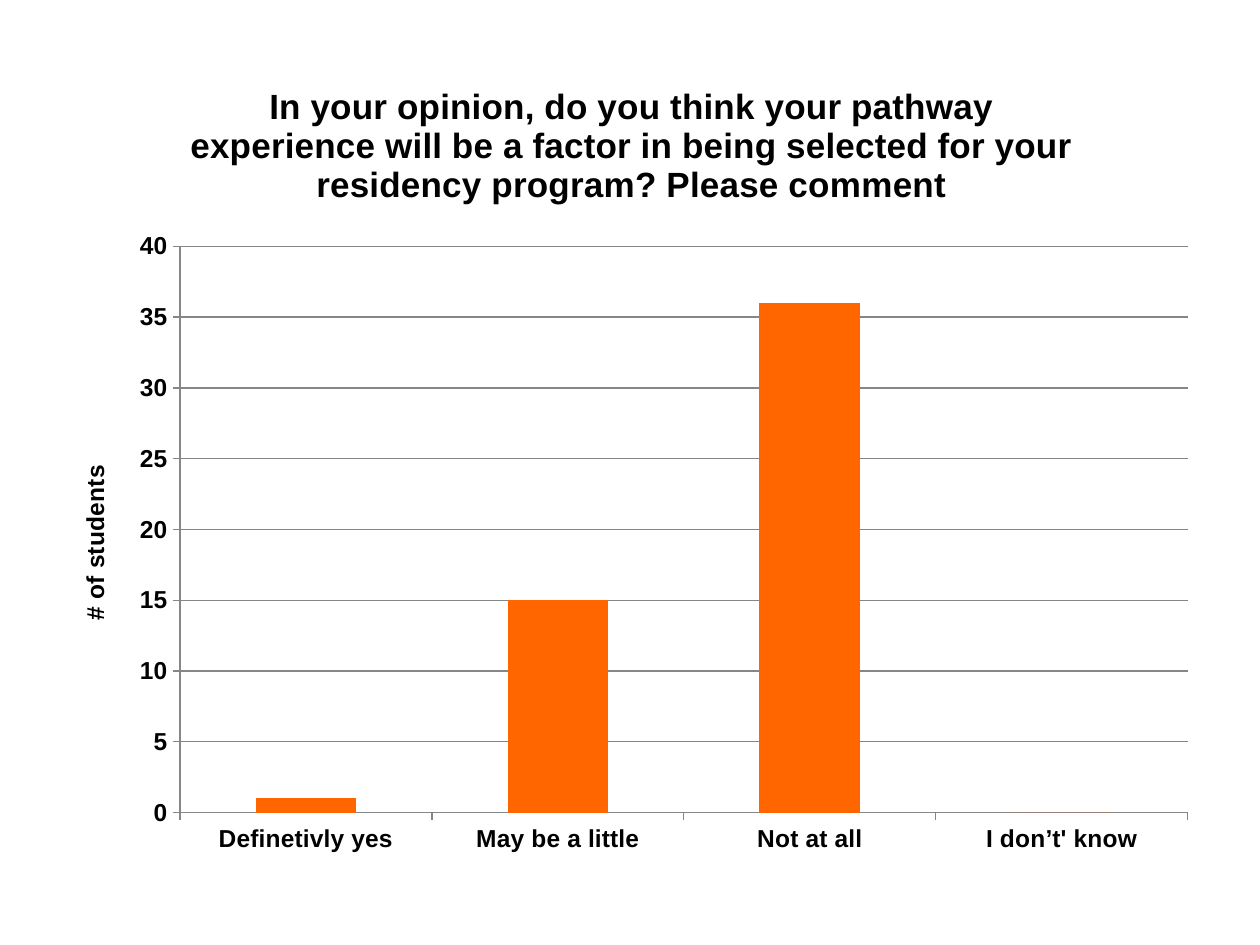
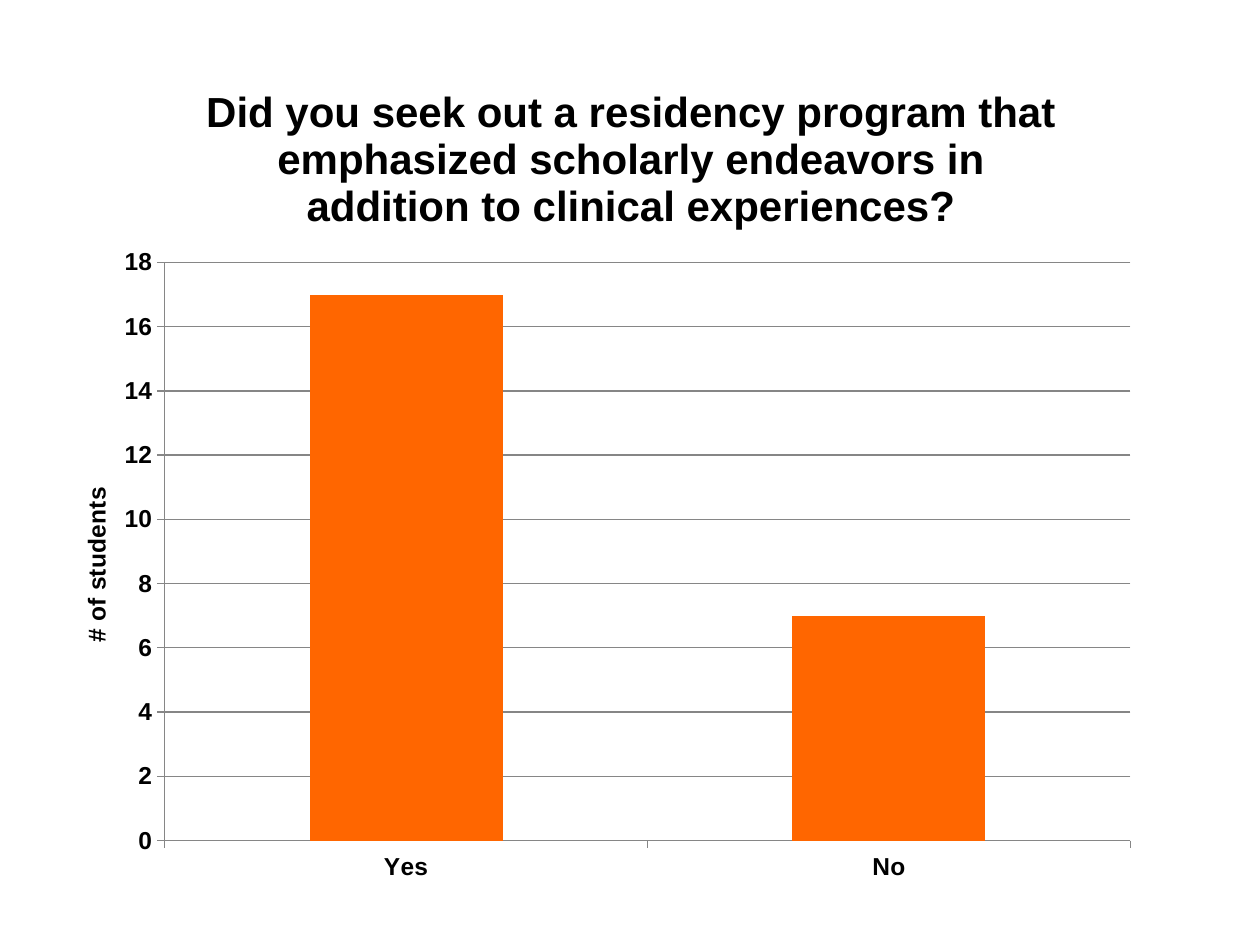
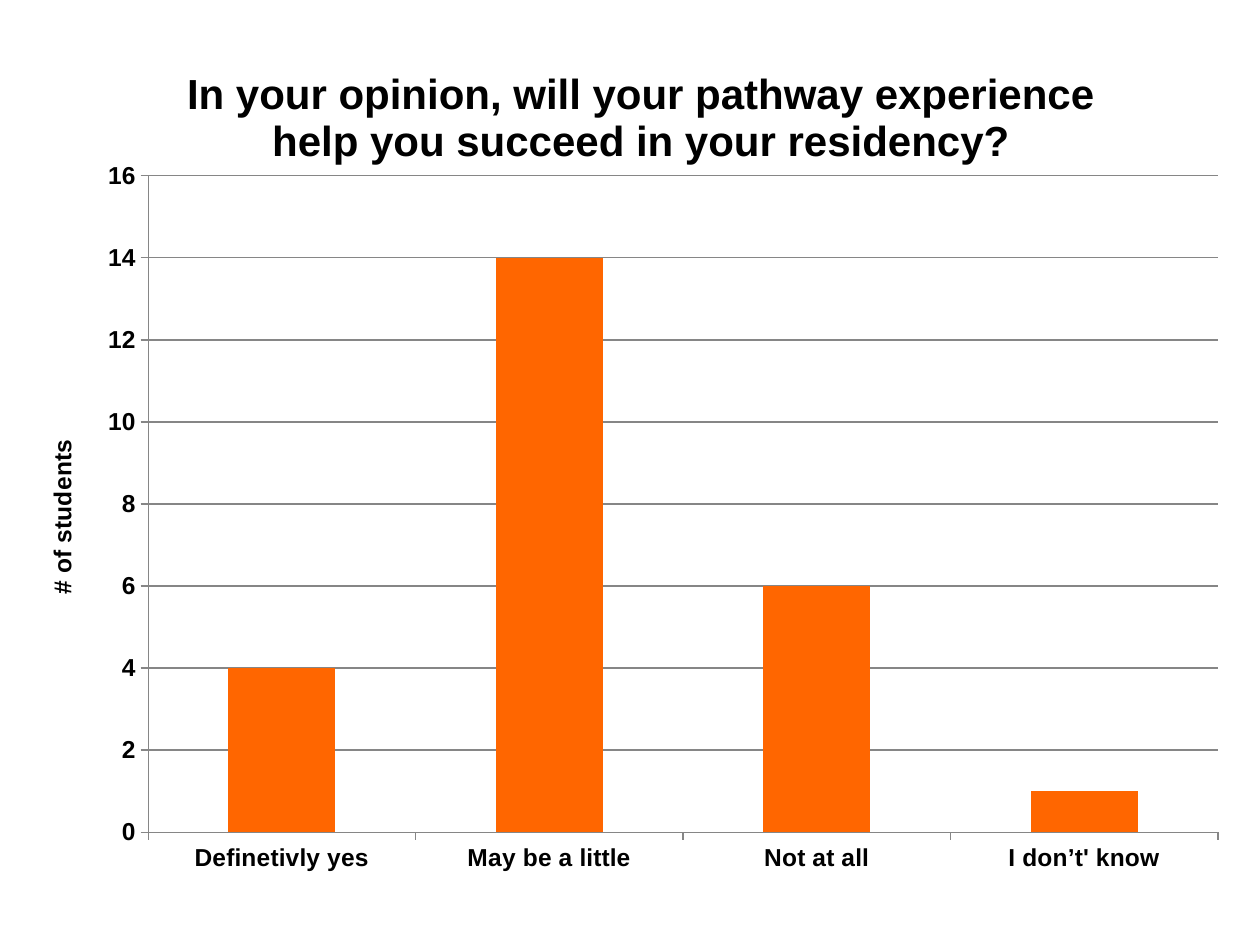
from pptx import Presentation
from pptx.chart.data import CategoryChartData
from pptx.dml.color import RGBColor
from pptx.enum.chart import XL_CHART_TYPE, XL_TICK_MARK
from pptx.oxml import parse_xml
from pptx.oxml.ns import nsdecls
from pptx.util import Pt

FONT = "Arial"
INK, BAR, GRID = "000000", "FF6600", "868686"
LABEL = "# of students"
SCALE = ["Definetivly yes", "May be a little", "Not at all", "I don’t' know"]

# box is left, top, width, height in px; plot is in fractions of the chart
SLIDES = [
    dict(title="In your opinion, do you think your pathway experience will be "
               "a factor in being selected for your residency program? "
               "Please comment",
         size=20, box=(52, 54, 1159, 815), plot=None,
         cats=SCALE, vals=[1, 15, 36, 0]),
    dict(title="Did you seek out a residency program that emphasized "
               "scholarly endeavors in addition to clinical experiences?",
         size=24, box=(76, 53, 1110, 838), plot=(0.08, 0.25, 0.87, 0.69),
         cats=["Yes", "No"], vals=[17, 7]),
    dict(title="In your opinion, will your pathway experience help you "
               "succeed in your residency?",
         size=24, box=(40, 34, 1202, 887), plot=(0.09, 0.16, 0.89, 0.74),
         cats=SCALE, vals=[4, 14, 6, 1]),
]


def px(n):
    return round(n * 914400 / 126)


def color(code):
    return RGBColor.from_string(code)


def style(font, size, bold=True):
    font.name, font.size, font.bold = FONT, Pt(size), bold
    font.color.rgb = color(INK)


def write(frame, text, size):
    run = frame.paragraphs[0].add_run()
    run.text = text
    style(run.font, size)


def rule(line):
    line.color.rgb = color(GRID)
    line.width = Pt(0.75)


def place(chart, plot):
    """Fix the inner plot area, given as fractions of the chart."""
    area = chart.element.chart.plotArea
    for old in area.findall("{*}layout"):
        area.remove(old)
    sides = "".join(f'<c:{k} val="{v}"/>' for k, v in zip("xywh", plot))
    area.insert(0, parse_xml(
        f'<c:layout {nsdecls("c")}><c:manualLayout>'
        '<c:layoutTarget val="inner"/><c:xMode val="edge"/>'
        f'<c:yMode val="edge"/>{sides}</c:manualLayout></c:layout>'))


def draw(slide, title, size, box, plot, cats, vals):
    data = CategoryChartData()
    data.categories = cats
    data.add_series("Series 1", vals)
    chart = slide.shapes.add_chart(
        XL_CHART_TYPE.COLUMN_CLUSTERED, *map(px, box), data).chart
    style(chart.font, 10, False)
    chart.has_legend = False
    chart.has_title = True
    write(chart.chart_title.text_frame, title, size)

    for axis in (chart.category_axis, chart.value_axis):
        axis.major_tick_mark = XL_TICK_MARK.OUTSIDE
        axis.minor_tick_mark = XL_TICK_MARK.NONE
        style(axis.tick_labels.font, 14)
        rule(axis.format.line)
    axis = chart.value_axis
    axis.has_major_gridlines = True
    rule(axis.major_gridlines.format.line)
    frame = axis.axis_title.text_frame
    write(frame, LABEL, 14)
    body = frame._txBody.bodyPr
    body.set("rot", "-5400000")
    body.set("vert", "horz")

    bars = chart.plots[0]
    bars.gap_width = 150
    bars.vary_by_categories = False
    fill = bars.series[0].format.fill
    fill.solid()
    fill.fore_color.rgb = color(BAR)
    if plot:
        place(chart, plot)


def main():
    deck = Presentation()
    deck.slide_width, deck.slide_height = px(1260), px(945)
    for item in SLIDES:
        draw(deck.slides.add_slide(deck.slide_layouts[6]), **item)
    deck.save("out.pptx")


if __name__ == "__main__":
    main()
